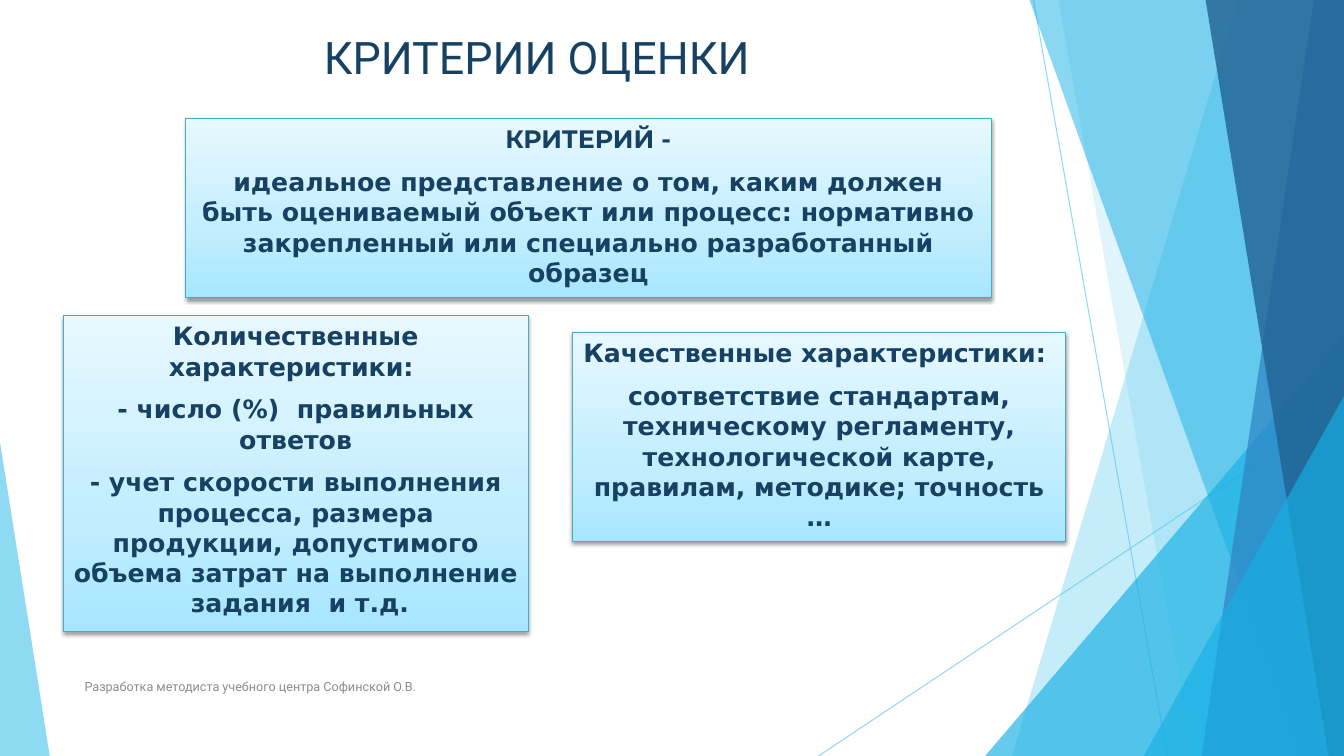
from dataclasses import dataclass

from lxml import etree
from pptx import Presentation
from pptx.dml.color import RGBColor
from pptx.enum.shapes import MSO_CONNECTOR, MSO_SHAPE
from pptx.enum.text import MSO_ANCHOR, MSO_AUTO_SIZE, PP_ALIGN
from pptx.oxml.ns import qn
from pptx.util import Inches, Pt

STRAIGHT = MSO_CONNECTOR.STRAIGHT
RECTANGLE, TRIANGLE = MSO_SHAPE.RECTANGLE, MSO_SHAPE.ISOSCELES_TRIANGLE
TOP, MIDDLE = MSO_ANCHOR.TOP, MSO_ANCHOR.MIDDLE
LEFT, CENTER = PP_ALIGN.LEFT, PP_ALIGN.CENTER
GROW = MSO_AUTO_SIZE.SHAPE_TO_FIT_TEXT

WIDTH, HEIGHT = Inches(13.33), Inches(7.5)


@dataclass(frozen=True)
class Theme:
    ink: str = "174162"
    muted: str = "8C8C8C"
    sky: str = "5FCBEF"
    cyan: str = "17B0E4"
    blue: str = "2E83C3"
    navy: str = "226292"
    box_line: str = "46AAC5"
    box_stops: tuple = ((0, "A7E6FF"), (35, "C1EDFF"), (100, "E7F8FF"))
    heading_font: str = "Roboto"
    term_font: str = "Montserrat"
    body_font: str = "DejaVu Sans"
    title_size: float = 32
    body_size: float = 18
    footer_size: float = 9
    line_width: float = 0.75
    paragraph_gap: float = 9


THEME = Theme()


# Positions are given as percentages of the slide's size
def across(share):
    return round(WIDTH * share / 100)


def down(share):
    return round(HEIGHT * share / 100)


def area(left, top, width, height):
    return across(left), down(top), across(width), down(height)


# XML helpers
def child(parent, tag, **attributes):
    element = etree.SubElement(parent, qn(tag))
    for name, value in attributes.items():
        element.set(name, str(value))
    return element


def set_opacity(owner, percent):
    for color in owner.iter(qn("a:srgbClr")):
        child(color, "a:alpha", val=percent * 1000)


# Background ornament
def paint(shape, color, opacity):
    shape.shadow.inherit = False
    shape.fill.solid()
    shape.fill.fore_color.rgb = RGBColor.from_string(color)
    set_opacity(shape.fill._xPr, opacity)
    shape.line.fill.background()


def add_ray(slide, x1, y1, x2, y2):
    ray = slide.shapes.add_connector(STRAIGHT, across(x1), down(y1), across(x2), down(y2))
    ray.line.color.rgb = RGBColor.from_string(THEME.sky)
    ray.line.width = Pt(THEME.line_width)
    properties = ray._element.spPr
    set_opacity(properties, 70)
    child(properties, "a:effectLst")


def add_facet(slide, top_x, bottom_x, color, opacity):
    """Full-height facet reaching to the right edge."""
    builder = slide.shapes.build_freeform(across(top_x), 0, scale=1.0)
    builder.add_line_segments([(WIDTH, 0), (WIDTH, HEIGHT), (across(bottom_x), HEIGHT)])
    paint(builder.convert_to_shape(), color, opacity)


def add_corner(slide, left, top, width, apex, color, opacity):
    """Triangle standing on the bottom edge."""
    corner = slide.shapes.add_shape(TRIANGLE, *area(left, top, width, 100 - top))
    corner.adjustments[0] = apex
    paint(corner, color, opacity)


def add_ornament(slide):
    add_ray(slide, 76.9, 0, 86.85, 100)
    add_ray(slide, 100, 53.7, 60.9, 100)
    add_facet(slide, 92.1, 75.3, THEME.sky, 36)
    add_facet(slide, 78.75, 88.75, THEME.sky, 20)
    add_corner(slide, 73.3, 44.4, 26.7, 1, THEME.cyan, 66)
    add_facet(slide, 76.6, 96.85, THEME.cyan, 50)
    add_facet(slide, 97.75, 89.4, THEME.blue, 70)
    add_facet(slide, 89.7, 98.85, THEME.navy, 80)
    add_corner(slide, 85.1, 52.4, 14.9, 1, THEME.cyan, 66)
    add_corner(slide, 0, 58.5, 3.7, 0, THEME.sky, 70)


# Text
def write(paragraph, text, font, size, color, align, bold=False):
    paragraph.alignment = align
    run = paragraph.add_run()
    run.text = text
    run.font.name = font
    run.font.size = Pt(size)
    run.font.bold = bold
    run.font.color.rgb = RGBColor.from_string(color)


def add_label(slide, place, text, size, color, align, anchor):
    frame = slide.shapes.add_textbox(*area(*place)).text_frame
    frame.word_wrap = True
    frame.vertical_anchor = anchor
    write(frame.paragraphs[0], text, THEME.heading_font, size, color, align)


# Gradient boxes
def fill_gradient(shape):
    shape.fill.gradient()
    shape.fill.gradient_angle = 90
    stops = shape.fill._xPr.find(qn("a:gradFill")).find(qn("a:gsLst"))
    for stop in list(stops):
        stops.remove(stop)
    for position, color in THEME.box_stops:
        child(child(stops, "a:gs", pos=position * 1000), "a:srgbClr", val=color)


def add_shadow(shape):
    shape.shadow.inherit = False
    effects = shape._element.spPr.find(qn("a:effectLst"))
    shadow = child(effects, "a:outerShdw", blurRad=Pt(3.1), dist=Pt(1.6),
                   dir=90 * 60000, rotWithShape=0)
    child(shadow, "a:srgbClr", val="000000")
    set_opacity(shadow, 38)


def add_box(slide, place, heading, details, heading_font=THEME.body_font):
    box = slide.shapes.add_shape(RECTANGLE, *area(*place))
    fill_gradient(box)
    box.line.color.rgb = RGBColor.from_string(THEME.box_line)
    box.line.width = Pt(THEME.line_width)
    add_shadow(box)
    frame = box.text_frame
    frame.word_wrap = True
    frame.auto_size = GROW
    frame.vertical_anchor = TOP
    write(frame.paragraphs[0], heading, heading_font, THEME.body_size, THEME.ink, CENTER, True)
    for detail in details:
        paragraph = frame.add_paragraph()
        paragraph.space_before = Pt(THEME.paragraph_gap)
        write(paragraph, detail, THEME.body_font, THEME.body_size, THEME.ink, CENTER, True)


def main():
    deck = Presentation()
    deck.slide_width, deck.slide_height = WIDTH, HEIGHT
    slide = deck.slides.add_slide(deck.slide_layouts[6])
    add_ornament(slide)

    # Title and footer
    add_label(slide, (4.7, 3.3, 70.5, 10.4), "КРИТЕРИИ ОЦЕНКИ",
              THEME.title_size, THEME.ink, CENTER, TOP)
    add_label(slide, (5.55, 88.1, 51.7, 5.3),
              "Разработка методиста учебного центра Софинской О.В.",
              THEME.footer_size, THEME.muted, LEFT, MIDDLE)

    # Definition and its two kinds of characteristics
    add_box(slide, (13.8, 15.7, 59.95, 23.6), "КРИТЕРИЙ -",
            ["идеальное представление о том, каким должен быть оцениваемый объект "
             "или процесс: нормативно закрепленный или специально разработанный образец"],
            THEME.term_font)
    add_box(slide, (42.6, 44, 36.7, 27.6), "Качественные характеристики: ",
            ["соответствие стандартам, техническому регламенту, технологической карте, "
             "правилам, методике; точность …"])
    add_box(slide, (4.7, 41.75, 34.6, 41.75), "Количественные характеристики: ",
            ["- число (%)  правильных ответов",
             "- учет скорости выполнения процесса, размера продукции, допустимого "
             "объема затрат на выполнение  задания  и т.д."])
    deck.save("out.pptx")


if __name__ == "__main__":
    main()
